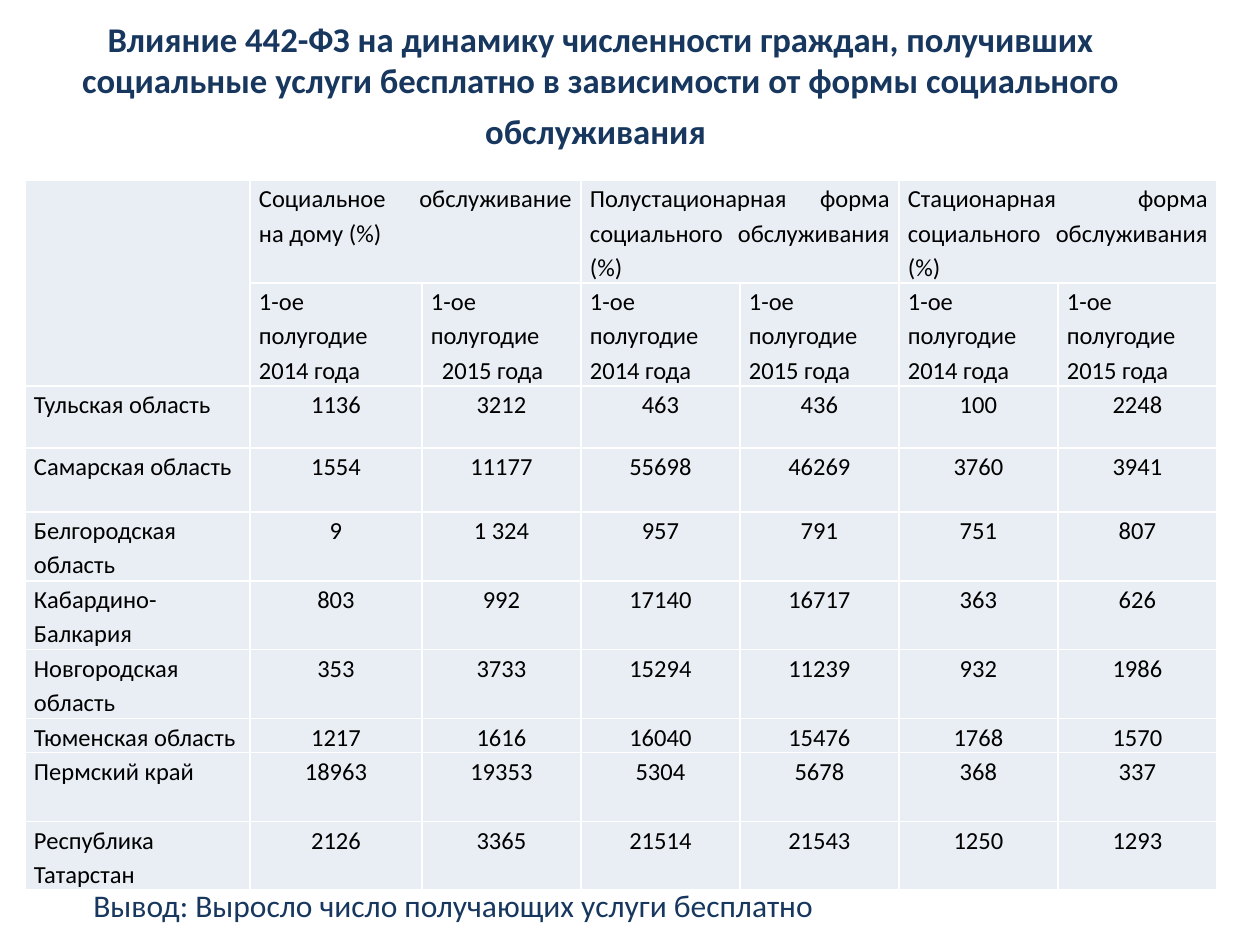
import dataclasses

import pptx
import pptx.dml.color
import pptx.enum.text
import pptx.oxml
import pptx.oxml.ns
import pptx.util

PX = 914400 // 126
ALIGN = pptx.enum.text.PP_ALIGN


@dataclasses.dataclass(frozen=True)
class Theme:
    font: str = "Calibri"
    heading: str = "17375E"
    ink: str = "000000"
    cell: str = "E9EDF4"
    border: str = "FFFFFF"
    title_size: float = 19.8
    title_end_size: float = 25.2
    table_size: float = 14
    conclusion_size: float = 18


THEME = Theme()

TITLE = ("Влияние 442-ФЗ на динамику численности граждан, получивших "
         "социальные услуги бесплатно в зависимости от формы социального "
         "обслуживания")
CONCLUSION = "Вывод: Выросло число получающих услуги бесплатно"

SERVICE_FORMS = [
    "Социальное обслуживание на дому (%)",
    "Полустационарная форма социального обслуживания (%)",
    "Стационарная форма социального обслуживания (%)",
]
YEARS = ["2014 года", "2015 года"]

# Region, space after its figures in points, row height in px, figures
REGIONS = [
    ("Тульская область", 0, 62, "1136", "3212", "463", "436", "100", "2248"),
    ("Самарская область", 6, 64, "1554", "11177", "55698", "46269", "3760", "3941"),
    ("Белгородская область", 6, 69, "9", "1 324", "957", "791", "751", "807"),
    ("Кабардино-Балкария", 6, 68, "803", "992", "17140", "16717", "363", "626"),
    ("Новгородская область", 0, 69, "353", "3733", "15294", "11239", "932", "1986"),
    ("Тюменская область", 0, 34, "1217", "1616", "16040", "15476", "1768", "1570"),
    ("Пермский край", 0, 69, "18963", "19353", "5304", "5678", "368", "337"),
    ("Республика Татарстан", 10, 68, "2126", "3365", "21514", "21543", "1250", "1293"),
]
HEADER_HEIGHTS = [102, 103]
COLUMN_WIDTHS = [225, 172] + [159] * 5


def px(length):
    return pptx.util.Emu(length * PX)


def place(shape, left, top, width, height):
    shape.left, shape.top = px(left), px(top)
    shape.width, shape.height = px(width), px(height)


def add_run(paragraph, text, size, color, bold=False):
    run = paragraph.add_run()
    run.text = text
    run.font.name = THEME.font
    run.font.size = pptx.util.Pt(size)
    run.font.bold = bold
    run.font.color.rgb = pptx.dml.color.RGBColor.from_string(color)


def write(frame, text, size=THEME.table_size, color=THEME.ink, bold=False,
          align=ALIGN.LEFT, spacing=None, after=0):
    """Fill a text frame, one paragraph for each line of the text."""
    frame.word_wrap = True
    for number, line in enumerate(text.split("\n")):
        paragraph = frame.add_paragraph() if number else frame.paragraphs[0]
        paragraph.alignment = align
        paragraph.line_spacing = spacing
        paragraph.space_after = pptx.util.Pt(after)
        add_run(paragraph, line, size, color, bold)


def style_cell(cell):
    """Give a cell its margins, white borders and fill."""
    cell.margin_left = cell.margin_right = px(9)
    cell.margin_top = cell.margin_bottom = 0
    properties = cell._tc.get_or_add_tcPr()
    for side in ("lnL", "lnR", "lnT", "lnB"):
        properties.append(pptx.oxml.parse_xml(
            f'<a:{side} {pptx.oxml.ns.nsdecls("a")} w="12700"><a:solidFill>'
            f'<a:srgbClr val="{THEME.border}"/></a:solidFill></a:{side}>'))
    cell.fill.solid()
    cell.fill.fore_color.rgb = pptx.dml.color.RGBColor.from_string(THEME.cell)


def write_cell(cell, text, align=ALIGN.JUSTIFY, after=0):
    write(cell.text_frame, text, align=align, spacing=1.15, after=after)


def add_title(slide):
    title = slide.shapes.title
    place(title, 0, 16, 1201, 139)
    title.text_frame.vertical_anchor = pptx.enum.text.MSO_ANCHOR.MIDDLE
    write(title.text_frame, TITLE, size=THEME.title_size, color=THEME.heading,
          bold=True, align=ALIGN.CENTER)
    # The larger closing space sets the height of the last line
    add_run(title.text_frame.paragraphs[0], " ", THEME.title_end_size, THEME.heading)


def add_header(table):
    table.cell(0, 0).merge(table.cell(1, 0))
    for group, form in enumerate(SERVICE_FORMS):
        first = 1 + 2 * group
        table.cell(0, first).merge(table.cell(0, first + 1))
        write_cell(table.cell(0, first), form)
        for offset, year in enumerate(YEARS):
            # The second column alone keeps its year in an indented paragraph
            split = first + offset == 2
            cell = table.cell(1, first + offset)
            write_cell(cell, "1-ое полугодие" + ("\n" if split else " ") + year)
            if split:
                indent = cell.text_frame.paragraphs[1]._p.get_or_add_pPr()
                indent.set("marL", str(px(11)))


def add_figures_table(slide):
    heights = HEADER_HEIGHTS + [region[2] for region in REGIONS]
    table = slide.shapes.add_table(
        len(heights), len(COLUMN_WIDTHS), px(25), px(180),
        px(sum(COLUMN_WIDTHS)), px(sum(heights))).table
    table.first_row = table.horz_banding = False
    for column, width in zip(table.columns, COLUMN_WIDTHS):
        column.width = px(width)
    for row, height in zip(table.rows, heights):
        row.height = px(height)
        for cell in row.cells:
            style_cell(cell)

    add_header(table)
    for row, (region, after, _, *figures) in enumerate(REGIONS, len(HEADER_HEIGHTS)):
        hyphenated = "-" in region
        write_cell(table.cell(row, 0), region,
                   align=ALIGN.LEFT if hyphenated else ALIGN.JUSTIFY)
        for column, figure in enumerate(figures, 1):
            write_cell(table.cell(row, column), figure, align=ALIGN.CENTER, after=after)
    # An empty merged cell still takes the table's type size
    table.cell(0, 0).text_frame.paragraphs[0].font.size = pptx.util.Pt(THEME.table_size)


def add_conclusion(slide):
    conclusion = slide.shapes.add_textbox(px(81), px(880), px(1064), px(50))
    write(conclusion.text_frame, CONCLUSION, size=THEME.conclusion_size,
          color=THEME.heading)


def main():
    deck = pptx.Presentation()
    deck.slide_width, deck.slide_height = px(1260), px(945)
    slide = deck.slides.add_slide(deck.slide_layouts[5])
    add_title(slide)
    add_figures_table(slide)
    add_conclusion(slide)
    deck.save("out.pptx")


if __name__ == "__main__":
    main()
